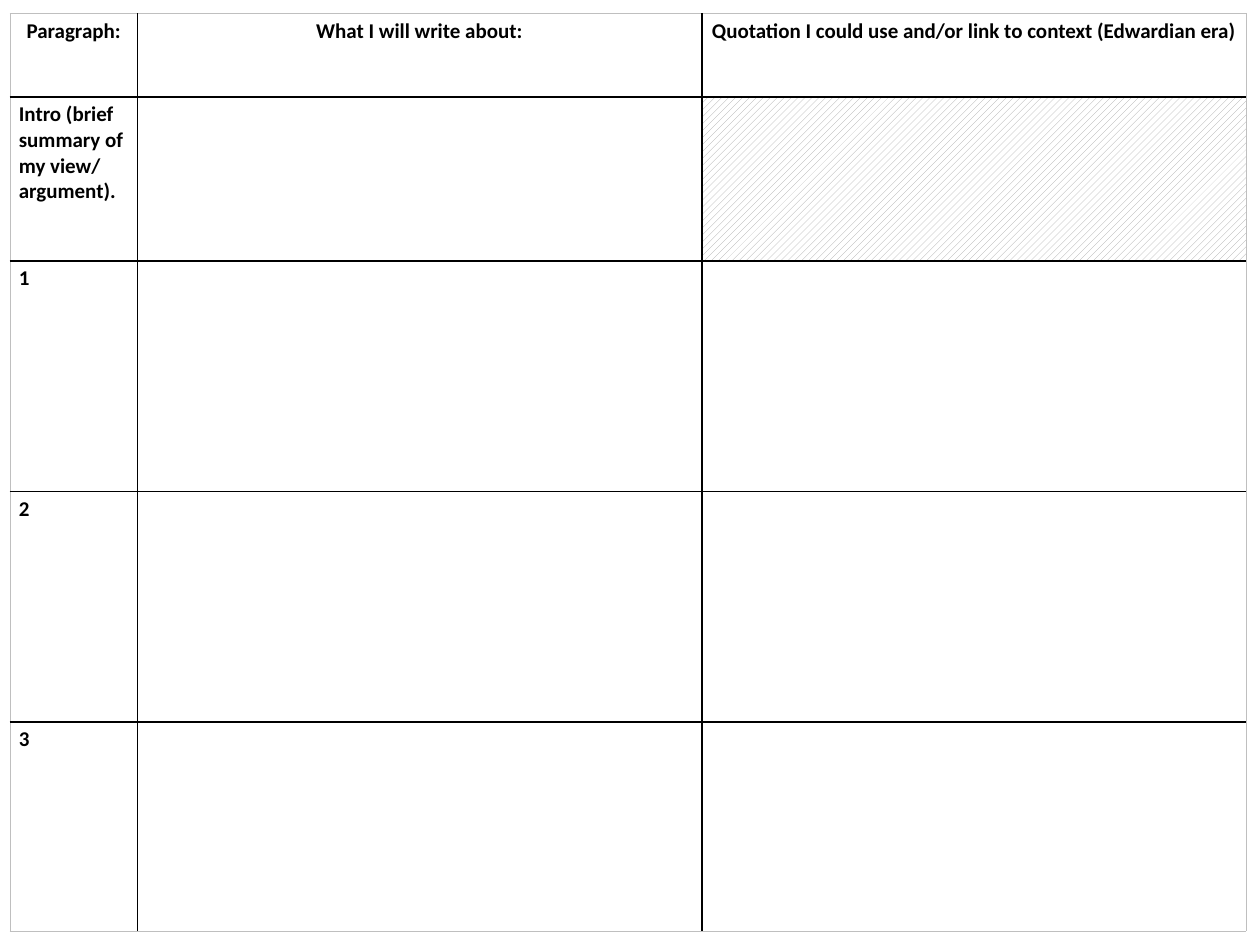
from dataclasses import dataclass

from lxml.etree import SubElement
from pptx import Presentation
from pptx.dml.color import RGBColor
from pptx.enum.dml import MSO_PATTERN
from pptx.enum.text import PP_ALIGN
from pptx.oxml.ns import qn
from pptx.table import Table, _Cell
from pptx.util import Inches, Pt

BLACK = RGBColor(0x00, 0x00, 0x00)
WHITE = RGBColor(0xFF, 0xFF, 0xFF)
HATCH_GREY = RGBColor(0xA6, 0xA6, 0xA6)
EDGE_GREY = RGBColor(0xBF, 0xBF, 0xBF)

LEFT, TOP = 0.08, 0.11
COLUMN_WIDTHS = (1.01, 4.48, 4.32)
HEADINGS = (
    "Paragraph:",
    "What I will write about:",
    "Quotation I could use and/or link to context (Edwardian era)",
)


@dataclass(frozen=True)
class PlanRow:
    height: float
    texts: tuple[str, ...]
    align: PP_ALIGN = PP_ALIGN.LEFT
    hatched_column: int | None = None


PLAN = (
    PlanRow(0.66, HEADINGS, PP_ALIGN.CENTER),
    PlanRow(1.3, ("Intro (brief summary of my view/ argument).",), hatched_column=2),
    PlanRow(1.83, ("1",)),
    PlanRow(1.83, ("2",)),
    PlanRow(1.66, ("3",)),
)


def draw_borders(cell: _Cell, row: int, column: int) -> None:
    """Black rules inside the grid, a faint hairline around it."""
    on_edge = {
        "a:lnL": column == 0,
        "a:lnR": column == len(COLUMN_WIDTHS) - 1,
        "a:lnT": row == 0,
        "a:lnB": row == len(PLAN) - 1,
    }
    properties = cell._tc.get_or_add_tcPr()
    for side, outer in on_edge.items():
        width, color = (Pt(0.5), EDGE_GREY) if outer else (Pt(1), BLACK)
        line = SubElement(properties, qn(side), w=str(int(width)))
        fill = SubElement(line, qn("a:solidFill"))
        SubElement(fill, qn("a:srgbClr"), val=str(color))


def fill_cell(cell: _Cell, hatched: bool) -> None:
    if hatched:
        cell.fill.patterned()
        cell.fill.pattern = MSO_PATTERN.WIDE_UPWARD_DIAGONAL
        cell.fill.fore_color.rgb = HATCH_GREY
        cell.fill.back_color.rgb = WHITE
    else:
        cell.fill.background()


def write_label(cell: _Cell, text: str, align: PP_ALIGN) -> None:
    paragraph = cell.text_frame.paragraphs[0]
    paragraph.alignment = align
    run = paragraph.add_run()
    run.text = text
    run.font.name = "Calibri"
    run.font.size = Pt(12)
    run.font.bold = True
    run.font.color.rgb = BLACK


def draw_row(table: Table, index: int, plan_row: PlanRow) -> None:
    table.rows[index].height = Inches(plan_row.height)
    for column in range(len(COLUMN_WIDTHS)):
        cell = table.cell(index, column)
        cell.margin_left = cell.margin_right = Inches(0.07)
        cell.margin_top = cell.margin_bottom = Inches(0.04)
        draw_borders(cell, index, column)
        fill_cell(cell, column == plan_row.hatched_column)
        if column < len(plan_row.texts):
            write_label(cell, plan_row.texts[column], plan_row.align)


def main() -> None:
    presentation = Presentation()
    presentation.slide_width, presentation.slide_height = Inches(10), Inches(7.5)
    slide = presentation.slides.add_slide(presentation.slide_layouts[6])

    # Essay planning grid
    planner = slide.shapes.add_table(
        len(PLAN), len(COLUMN_WIDTHS),
        Inches(LEFT), Inches(TOP),
        Inches(sum(COLUMN_WIDTHS)), Inches(sum(row.height for row in PLAN)),
    ).table
    planner.first_row = planner.horz_banding = False
    for column, width in zip(planner.columns, COLUMN_WIDTHS):
        column.width = Inches(width)
    for index, plan_row in enumerate(PLAN):
        draw_row(planner, index, plan_row)

    presentation.save("out.pptx")


if __name__ == "__main__":
    main()
